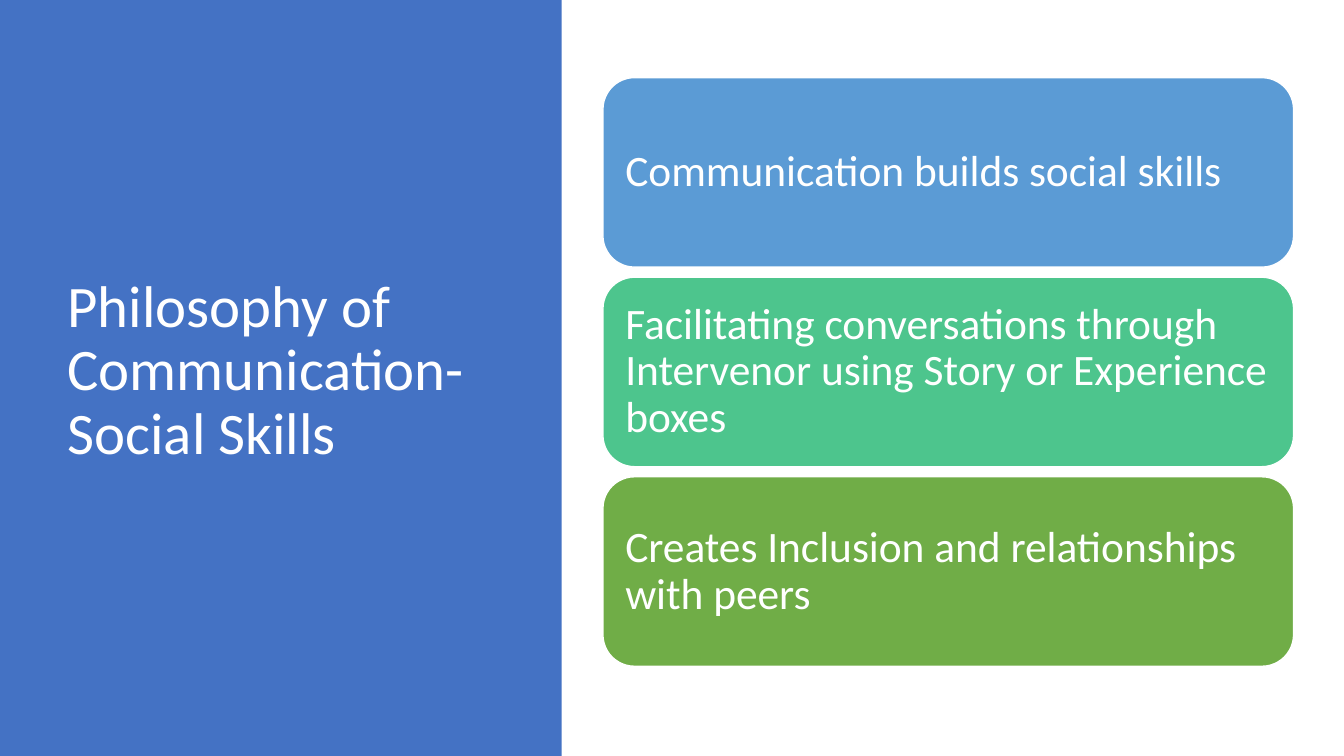
"""Build a slide with a title panel and three stacked cards."""
import pptx
import pptx.util
import pptx.dml.color
import pptx.enum.shapes
import pptx.enum.text

RGB = pptx.dml.color.RGBColor
SHAPE = pptx.enum.shapes.MSO_SHAPE
INCH = pptx.util.Inches
WHITE = RGB(0xFF, 0xFF, 0xFF)
NAVY = RGB(0x44, 0x72, 0xC4)
BLUE = RGB(0x5B, 0x9B, 0xD5)
TEAL = RGB(0x4D, 0xC5, 0x8D)
GREEN = RGB(0x70, 0xAD, 0x47)
WIDE, HIGH = 13.33, 7.5
LEFT, TOP, SPAN, TALL, STEP = 5.98, 0.77, 6.85, 1.88, 1.98
CARDS = [
    ("Communication builds social skills", BLUE),
    ("Facilitating conversations through Intervenor using Story or Experience boxes", TEAL),
    ("Creates Inclusion and relationships with peers", GREEN),
]


def write(shape, text, size, inset):
    frame = shape.text_frame
    frame.text = text
    frame.word_wrap = True
    frame.auto_size = pptx.enum.text.MSO_AUTO_SIZE.NONE
    frame.vertical_anchor = pptx.enum.text.MSO_ANCHOR.MIDDLE
    frame.margin_left = frame.margin_right = INCH(inset)
    line = frame.paragraphs[0]
    line.alignment = pptx.enum.text.PP_ALIGN.LEFT
    line.line_spacing = 0.9
    line.font.name = "Calibri"
    line.font.size = pptx.util.Pt(size)
    line.font.color.rgb = WHITE


def block(slide, kind, box, fill):
    shape = slide.shapes.add_shape(kind, *map(INCH, box))
    shape.shadow.inherit = False
    shape.fill.solid()
    shape.fill.fore_color.rgb = fill
    shape.line.fill.background()
    return shape


def head(slide, text):
    title = slide.shapes.title
    title.left, title.top, title.width, title.height = map(INCH, (0.57, 0.68, 4.16, 6.02))
    write(title, text, 42, 0.1)
    panel = block(slide, SHAPE.RECTANGLE, (0, 0, 5.57, HIGH), NAVY)
    title.element.addprevious(panel.element)


def card(slide, row, text, fill):
    box = (LEFT, TOP + row * STEP, SPAN, TALL)
    shape = block(slide, SHAPE.ROUNDED_RECTANGLE, box, fill)
    shape.line.color.rgb = WHITE
    shape.line.width = pptx.util.Pt(1)
    write(shape, text, 31, 0.13)


def main():
    deck = pptx.Presentation()
    deck.slide_width, deck.slide_height = INCH(WIDE), INCH(HIGH)
    slide = deck.slides.add_slide(deck.slide_layouts.get_by_name("Title Only"))
    head(slide, "Philosophy of Communication-Social Skills")
    for row, (text, fill) in enumerate(CARDS):
        card(slide, row, text, fill)
    deck.save("out.pptx")


if __name__ == "__main__":
    main()
